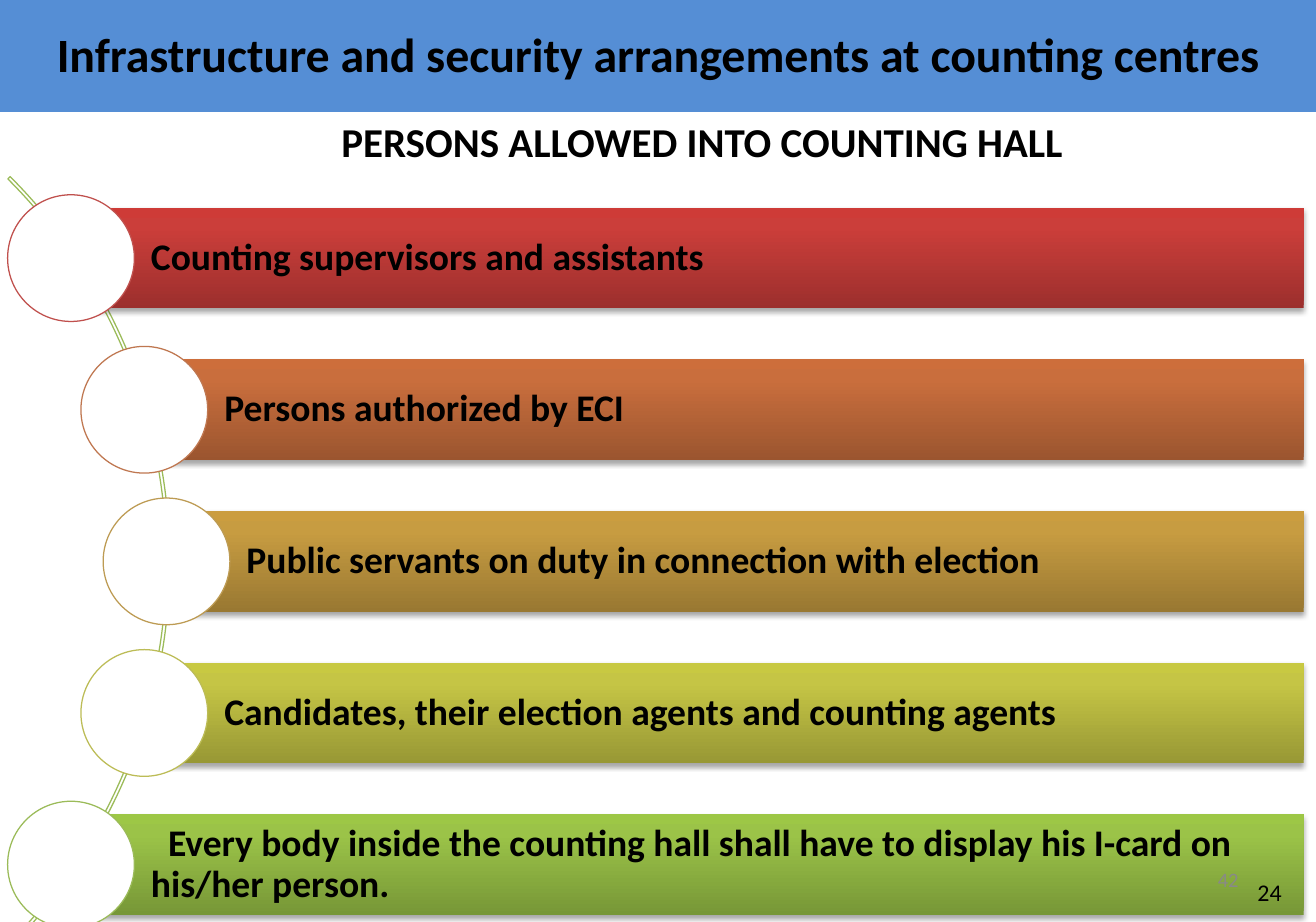
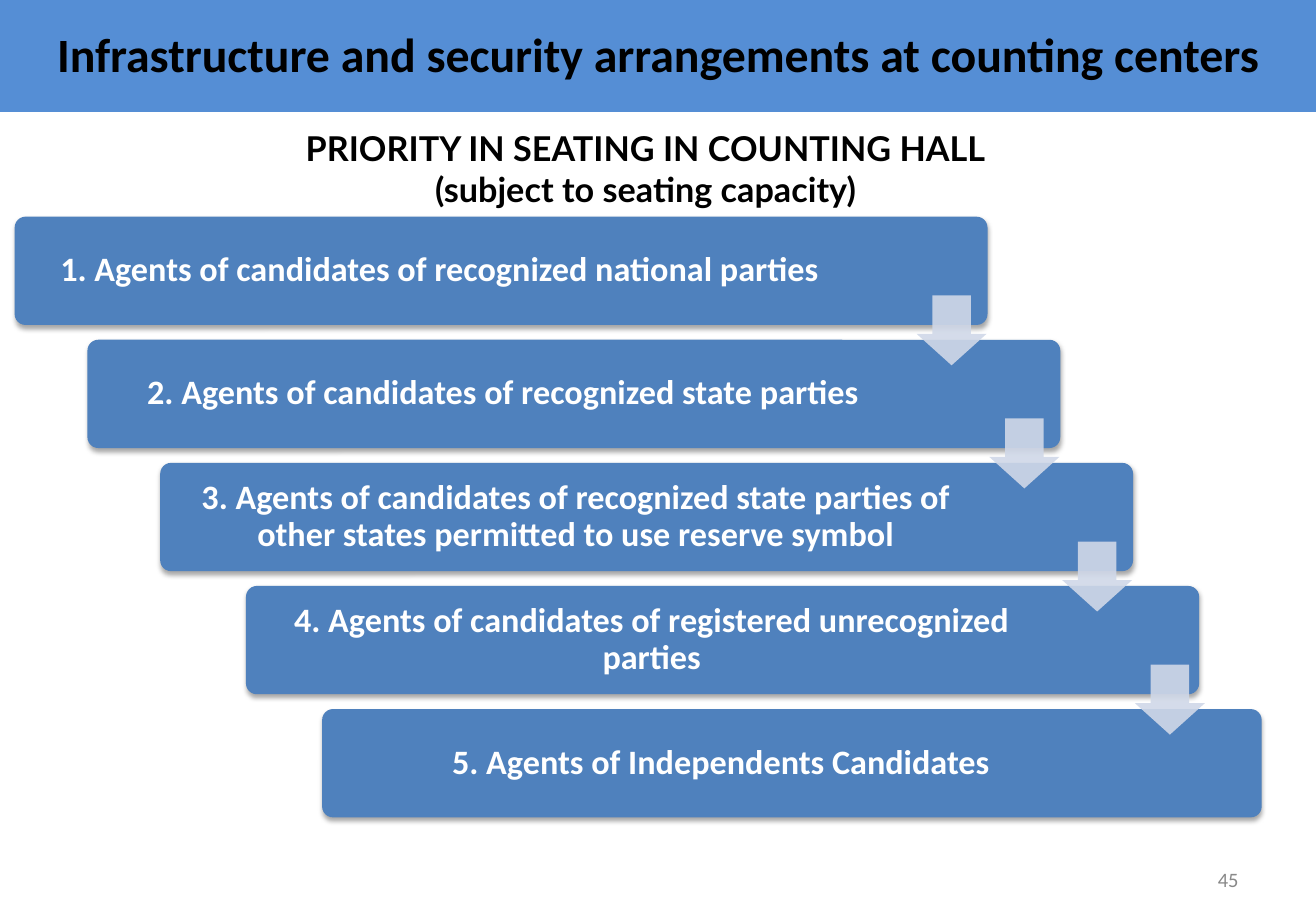
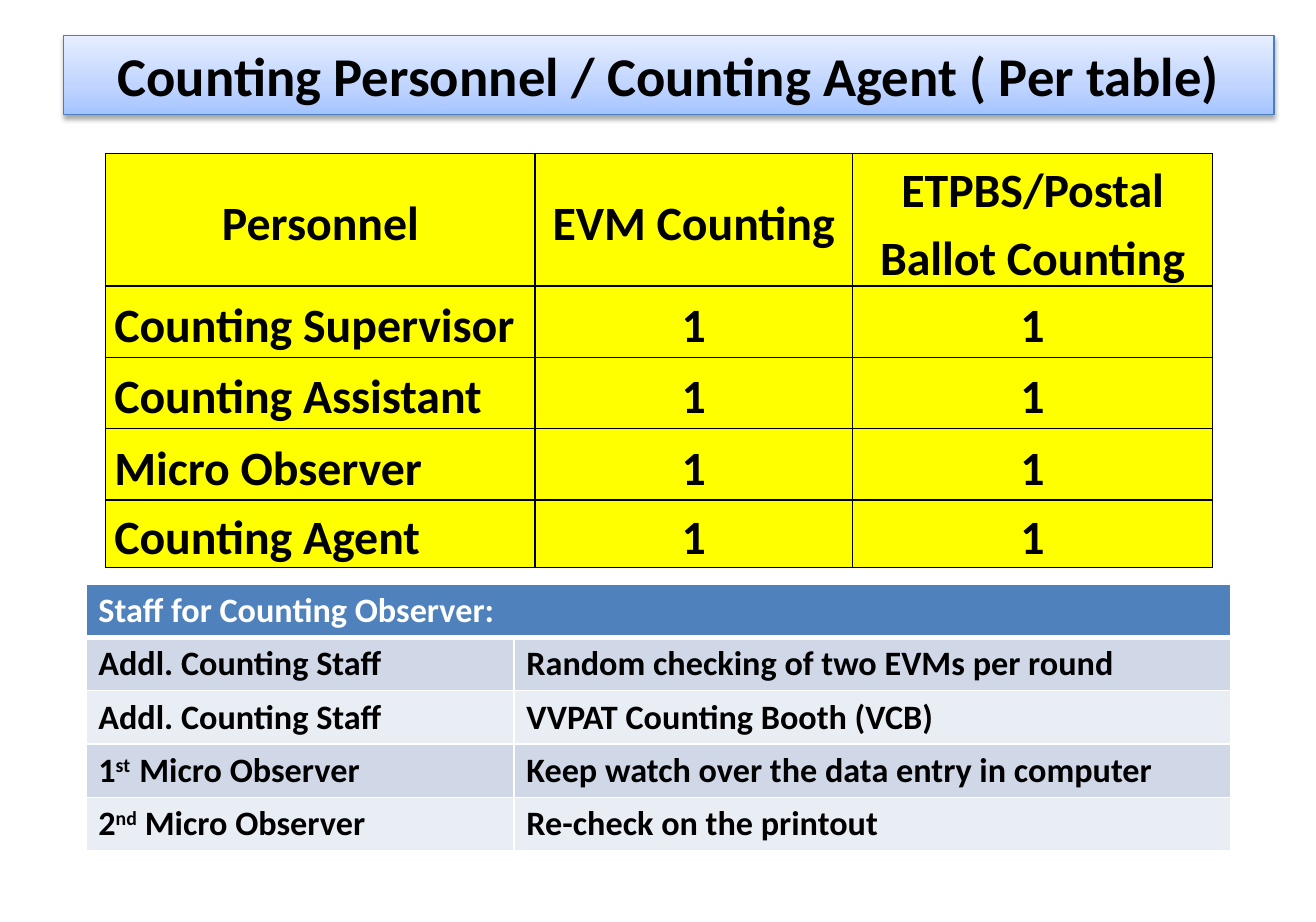
import math
import pptx
import pptx.util
import pptx.dml.color
import pptx.enum.shapes
import pptx.enum.text
import pptx.oxml
import pptx.oxml.ns

Pt = pptx.util.Pt
SHAPE = pptx.enum.shapes.MSO_SHAPE
ALIGN = pptx.enum.text.PP_ALIGN
ANCHOR = pptx.enum.text.MSO_ANCHOR
qn = pptx.oxml.ns.qn
NS = 'xmlns:a="http://schemas.openxmlformats.org/drawingml/2006/main"'

W, H = 770.4, 540
FONT = "Calibri"
COLORS = {
    "black": "000000", "white": "FFFFFF", "band": "558ED5", "blue": "4F81BD",
    "pale": "D0D8E8", "paler": "E9EDF4", "gray": "898989", "yellow": "FFFF00",
    "arc": "9BBB59", "frame": "4B7EBC",
}
TITLE_STOPS = [(0, "A4C4FF"), (35, "BFD4FF"), (100, "E6EEFF")]

HALL_TITLE = "Infrastructure and security arrangements at counting centres"
HALL_HEADING = "PERSONS ALLOWED INTO COUNTING HALL"
PERSONS = [
    ("Counting supervisors and assistants", "C0504D", ("9C2F2D", "CB3E3A", "CE3B37"), 0),
    ("Persons authorized by ECI", "BF7750", ("9B552F", "C96E3D", "CD6E3B"), 0),
    ("Public servants on duty in connection with election", "BD9B53",
     ("997832", "C79C41", "CB9D3F"), 0),
    ("Candidates, their election agents and counting agents", "BCBC56",
     ("989835", "C5C545", "C8C942"), 0),
    ("Every body inside the counting hall shall have to display his I-card on his/her person.",
     "9BBB59", ("779737", "9BC348", "9DC746"), 10),
]

SEATING_TITLE = "Infrastructure and security arrangements at counting centers"
SEATING_HEADING = "PRIORITY IN SEATING IN COUNTING HALL\v(subject to seating capacity)"
SEATING = [
    ("1. Agents of candidates of recognized national parties", 8.6, 569.5, 78),
    ("2. Agents of candidates of recognized state parties", 51.2, 569.5, 89),
    ("3. Agents of candidates of recognized state parties of other states "
     "permitted to use reserve symbol", 93.8, 569.5, 89),
    ("4. Agents of candidates of registered unrecognized parties", 144, 558, 89),
    ("5. Agents of Independents Candidates", 188.6, 550, 89),
]

PERSONNEL_TITLE = "Counting Personnel / Counting Agent ( Per table)"
PERSONNEL = [
    ("Personnel", "EVM Counting", "ETPBS/Postal Ballot Counting"),
    ("Counting Supervisor", "1", "1"),
    ("Counting Assistant", "1", "1"),
    ("Micro Observer", "1", "1"),
    ("Counting Agent", "1", "1"),
]
OBSERVER_STAFF = [
    (["Staff for Counting Observer:"], [""]),
    (["Addl. Counting Staff"], ["Random checking of two EVMs per round"]),
    (["Addl. Counting Staff"], ["VVPAT Counting Booth (VCB)"]),
    (["1", "st  ", "Micro Observer"], ["Keep watch over the data entry in computer"]),
    (["2", "nd", " Micro Observer"], ["Re-check on the printout"]),
]


def rgb(color):
    return pptx.dml.color.RGBColor.from_string(COLORS.get(color, color))


def style(p, size, color="black", align=ALIGN.LEFT, bold=True, font=FONT, spacing=None):
    p.alignment = align
    p.font.name, p.font.size, p.font.bold = font, Pt(size), bold
    p.font.color.rgb = rgb(color)
    if spacing:
        p.line_spacing = spacing


def write(sp, text, size, insets=(7.2, 3.6, 7.2, 3.6), anchor=ANCHOR.MIDDLE, **kw):
    tf = sp.text_frame
    tf.word_wrap = True
    tf.vertical_anchor = anchor
    tf.margin_left, tf.margin_top, tf.margin_right, tf.margin_bottom = map(Pt, insets)
    p = tf.paragraphs[0]
    p.text = text
    style(p, size, **kw)
    return p


def label(s, at, text, size, **kw):
    return write(s.shapes.add_textbox(*map(Pt, at)), text, size, **kw)


def shape(s, kind, at, fill=None, line=None, stops=None, shadow=False):
    sp = s.shapes.add_shape(kind, *map(Pt, at))
    spPr = sp._element.spPr
    if stops:
        sp.fill.gradient()
        gs = "".join(f'<a:gs pos="{pos * 1000}"><a:srgbClr val="{c}"/></a:gs>' for pos, c in stops)
        spPr.replace(spPr.find(qn("a:gradFill")), pptx.oxml.parse_xml(
            f'<a:gradFill {NS} rotWithShape="1"><a:gsLst>{gs}</a:gsLst>'
            '<a:lin ang="16200000" scaled="0"/></a:gradFill>'))
    elif fill:
        sp.fill.solid()
        sp.fill.fore_color.rgb = rgb(fill)
    else:
        sp.fill.background()
    if line:
        sp.line.color.rgb = rgb(line)
        sp.line.width = Pt(0.75)
    else:
        sp.line.fill.background()
    sp.shadow.inherit = False
    if shadow:
        spPr.find(qn("a:effectLst")).append(pptx.oxml.parse_xml(
            f'<a:outerShdw {NS} blurRad="{Pt(3.1)}" dist="{Pt(1.8)}" dir="5400000" rotWithShape="0">'
            '<a:srgbClr val="000000"><a:alpha val="35000"/></a:srgbClr></a:outerShdw>'))
    return sp


def title_band(s, text):
    sp = shape(s, SHAPE.RECTANGLE, (0, -3, W, 68.5), "band")
    write(sp, text, 28, align=ALIGN.CENTER)


def page_number(s, number):
    label(s, (552.2, 500.4, 180, 28.8), number, 12, color="gray", align=ALIGN.RIGHT, bold=False)


def borders(cell, color, width, bottom=None):
    tcPr = cell._tc.get_or_add_tcPr()
    for side in ("L", "R", "T", "B"):
        w = bottom if bottom and side == "B" else width
        tcPr.append(pptx.oxml.parse_xml(
            f'<a:ln{side} {NS} w="{Pt(w)}"><a:solidFill><a:srgbClr val="{COLORS[color]}"/>'
            f'</a:solidFill></a:ln{side}>'))


def table(s, left, top, cols, rows):
    tbl = s.shapes.add_table(len(rows), len(cols), Pt(left), Pt(top),
                             Pt(sum(cols)), Pt(sum(rows))).table
    for col, w in zip(tbl.columns, cols):
        col.width = Pt(w)
    for row, h in zip(tbl.rows, rows):
        row.height = Pt(h)
    return tbl


def fill_cell(cell, color):
    cell.fill.solid()
    cell.fill.fore_color.rgb = rgb(color)


def persons_slide(s):
    title_band(s, HALL_TITLE)
    arc = shape(s, SHAPE.BLOCK_ARC, (-538.6, 10, 638, 638), line="arc")
    for i, value in enumerate((189, 27, 0.003)):
        arc.adjustments[i] = value
    bar_h, dot, step, middle, right = 59, 74.2, 88.8, 328.8, 763.2
    orbit, orbit_x = 310, -212.5
    for i, (text, line, shades, indent) in enumerate(PERSONS):
        dy = (i - 2) * step
        x, y = orbit_x + math.sqrt(orbit ** 2 - dy ** 2), middle + dy
        bar = shape(s, SHAPE.RECTANGLE, (x, y - bar_h / 2, right - x, bar_h),
                    stops=list(zip((0, 80, 100), shades)), shadow=True)
        p = write(bar, text, 22, insets=(46.8, 4.3, 4.3, 4.3), spacing=0.9)
        if indent:
            p._p.get_or_add_pPr().set("indent", str(Pt(indent)))
        shape(s, SHAPE.OVAL, (x - dot / 2, y - dot / 2, dot, dot), "white", line)
    label(s, (149, 64.8, 524, 36.7), HALL_HEADING, 24, anchor=ANCHOR.TOP, align=ALIGN.CENTER)
    page_number(s, "42")
    label(s, (633.6, 510.5, 123.8, 24.5), "24", 14, anchor=ANCHOR.TOP,
          align=ALIGN.RIGHT, bold=False)


def seating_slide(s):
    title_band(s, SEATING_TITLE)
    top, step = 126.9, 72.1
    for i, (text, x, w, inset) in enumerate(SEATING):
        sp = shape(s, SHAPE.ROUNDED_RECTANGLE, (x, top + i * step, w, 63.4), "blue", shadow=True)
        sp.adjustments[0] = 0.1
        write(sp, text, 20, insets=(6, 6, inset, 6), color="white",
              align=ALIGN.CENTER, spacing=0.9)
    for i in range(len(SEATING) - 1):
        arrow = shape(s, SHAPE.DOWN_ARROW, (536.6 + i * 42.6, 173 + i * step, 41, 41), "pale")
        arrow.adjustments[0], arrow.adjustments[1] = 0.55, 0.45
        clr = arrow._element.spPr.find(qn("a:solidFill"))[0]
        clr.append(pptx.oxml.parse_xml(f'<a:alpha {NS} val="90000"/>'))
    label(s, (24.5, 64.8, 707, 62), SEATING_HEADING, 20, insets=(7.2, 9.7, 7.2, 3.6),
          anchor=ANCHOR.TOP, align=ALIGN.CENTER, font="Lato")
    page_number(s, "45")


def personnel_slide(s):
    sp = shape(s, SHAPE.RECTANGLE, (37.4, 20.9, 708.5, 46), line="frame",
               stops=TITLE_STOPS, shadow=True)
    write(sp, PERSONNEL_TITLE, 32, align=ALIGN.CENTER)

    tbl = table(s, 61.9, 90, (251.3, 185.8, 211), (77.5, 41.8, 41.8, 41.8, 39.6))
    for i, row in enumerate(PERSONNEL):
        for j, text in enumerate(row):
            cell = tbl.cell(i, j)
            cell.vertical_anchor = ANCHOR.MIDDLE
            cell.margin_left = cell.margin_right = Pt(5)
            cell.margin_top = cell.margin_bottom = 0
            borders(cell, "black", 1)
            fill_cell(cell, "yellow")
            p = cell.text_frame.paragraphs[0]
            p.text = text
            style(p, 28, align=ALIGN.CENTER if i == 0 or j else ALIGN.LEFT, spacing=1.15)

    tbl = table(s, 50.4, 342, (250.6, 419.8), [31.2] * len(OBSERVER_STAFF))
    for i, row in enumerate(OBSERVER_STAFF):
        for j, parts in enumerate(row):
            cell = tbl.cell(i, j)
            borders(cell, "white", 1, bottom=3 if i == 0 else None)
            fill_cell(cell, "blue" if i == 0 else "pale" if i % 2 else "paler")
            p = cell.text_frame.paragraphs[0]
            for k, part in enumerate(parts):
                r = p.add_run()
                r.text = part
                if k == 1:
                    r._r.get_or_add_rPr().set("baseline", "30000")
            style(p, 20, color="black" if i else "white")
    tbl.cell(0, 0).merge(tbl.cell(0, 1))


def main():
    prs = pptx.Presentation()
    prs.slide_width, prs.slide_height = Pt(W), Pt(H)
    for build in (persons_slide, seating_slide, personnel_slide):
        build(prs.slides.add_slide(prs.slide_layouts[6]))
    prs.save("out.pptx")


if __name__ == "__main__":
    main()
